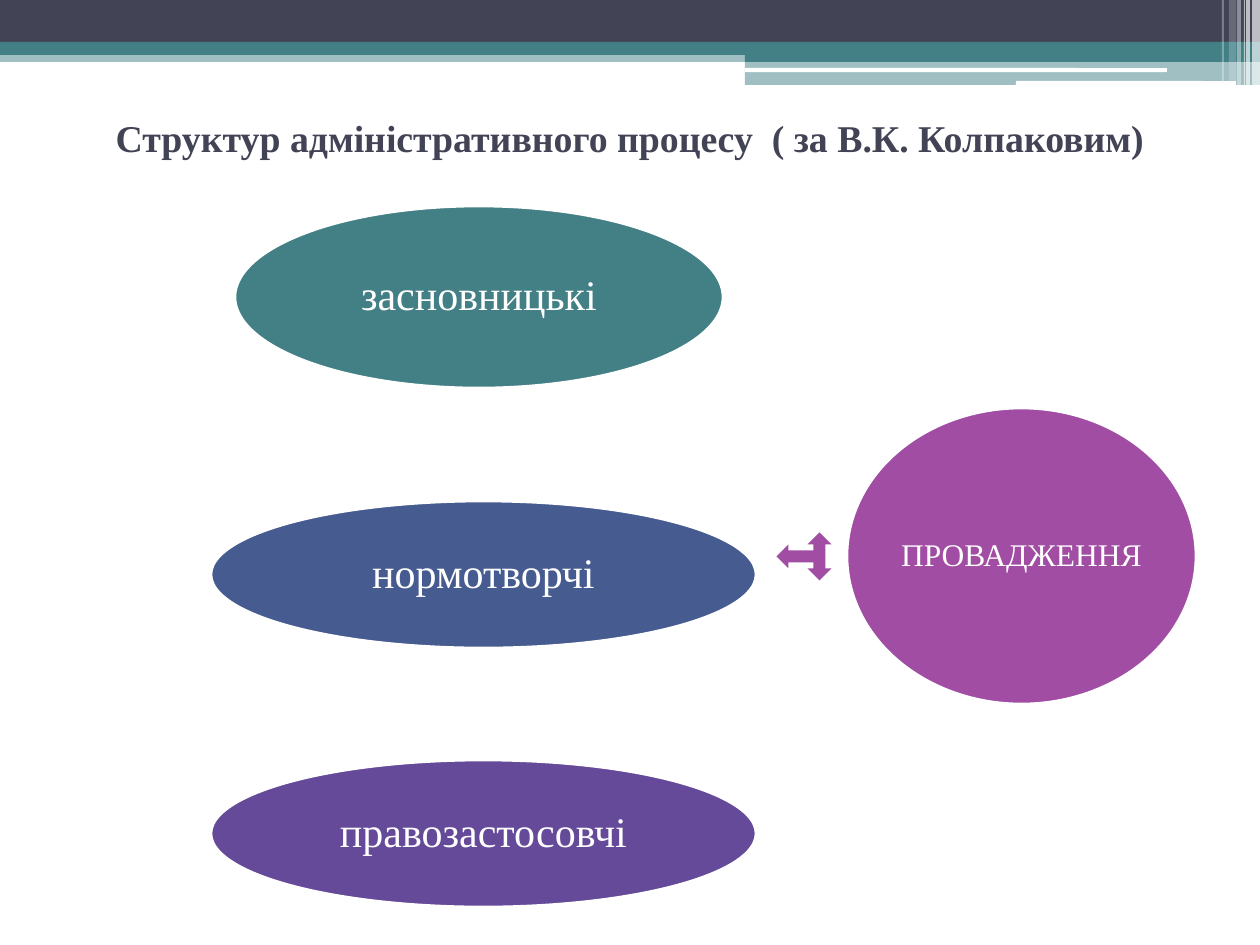
from lxml.etree import SubElement
from pptx import Presentation
from pptx.dml.color import RGBColor
from pptx.enum.shapes import MSO_SHAPE
from pptx.enum.text import MSO_ANCHOR, MSO_AUTO_SIZE, PP_ALIGN
from pptx.oxml.ns import qn
from pptx.util import Pt

PIXEL = 914400 / 126
FONT = "Times New Roman"
WHITE, TEAL, SLATE, PURPLE = "FFFFFF", "438086", "424456", "A04DA3"


def add_figure(kind, bounds, color, opacity=100, outline=None):
    """Add a filled preset shape; bounds are left, top, width, height in pixels."""
    shape = page.shapes.add_shape(kind, *[round(value * PIXEL) for value in bounds])
    shape.shadow.inherit = False
    shape.fill.solid()
    shape.fill.fore_color.rgb = RGBColor.from_string(color)
    if opacity < 100:
        color_node = shape.fill._xPr.find(qn("a:solidFill"))[0]
        SubElement(color_node, qn("a:alpha"), val=str(opacity * 1000))
    if outline:
        shape.line.color.rgb = RGBColor.from_string(outline)
        shape.line.width = Pt(1.5)
    else:
        shape.line.fill.background()
    return shape


def write_text(box, text, size, color, bold=False, spacing=1.0, wrap=True, inset=None):
    """Write one centred paragraph into a shape or placeholder."""
    frame = box.text_frame
    frame.word_wrap = wrap
    frame.auto_size = MSO_AUTO_SIZE.NONE
    frame.vertical_anchor = MSO_ANCHOR.MIDDLE
    if inset is not None:
        margin = round(inset * PIXEL)
        frame.margin_left = frame.margin_right = margin
        frame.margin_top = frame.margin_bottom = margin
    para = frame.paragraphs[0]
    para.alignment = PP_ALIGN.CENTER
    para.line_spacing = spacing
    span = para.add_run()
    span.text = text
    span.font.name = FONT
    span.font.size = Pt(size)
    span.font.bold = bold
    span.font.color.rgb = RGBColor.from_string(color)


deck = Presentation()
deck.slide_width, deck.slide_height = round(1260 * PIXEL), round(945 * PIXEL)
page = deck.slides.add_slide(deck.slide_layouts[5])

# Header bands
for bounds, color, opacity in [
    ((0, 50, 1260, 12), TEAL, 50),
    ((0, 0, 1260, 43), SLATE, 100),
    ((0, 42, 1260, 13), TEAL, 100),
    ((745, 49, 515, 13), TEAL, 100),
    ((745, 61, 515, 24), TEAL, 50),
]:
    add_figure(MSO_SHAPE.RECTANGLE, bounds, color, opacity)

for bounds in [(745, 68, 422, 4), (1016, 81, 220, 5)]:
    add_figure(MSO_SHAPE.ROUNDED_RECTANGLE, bounds, WHITE)

# Translucent stripes in the corner
for left, width, height, opacity in [
    (1252, 8, 85, 65),
    (1246, 4, 85, 65),
    (1244, 1, 85, 60),
    (1237, 4, 85, 40),
    (1229, 7, 81, 20),
    (1222, 2, 81, 30),
]:
    add_figure(MSO_SHAPE.RECTANGLE, (left, 0, width, height), WHITE, opacity)

# Title
title = page.shapes.title
title.left, title.top, title.width, title.height = [
    round(value * PIXEL) for value in (63, 85, 1134, 105)
]
write_text(title, "Структур адміністративного процесу  ( за В.К. Колпаковим)",
           21.6, SLATE, bold=True)

# Kinds of proceedings and their common name
arrow = add_figure(MSO_SHAPE.LEFT_RIGHT_UP_ARROW, (780, 529, 48, 55), PURPLE)
arrow.rotation = 270

for text, bounds, color, size in [
    ("засновницькі", (235, 206, 488, 182), TEAL, 24),
    ("нормотворчі", (211, 501, 545, 147), "465B90", 24),
    ("правозастосовчі", (211, 760, 545, 147), "654A99", 24),
    ("ПРОВАДЖЕННЯ", (847, 408, 349, 296), PURPLE, 18),
]:
    oval = add_figure(MSO_SHAPE.OVAL, bounds, color, outline=WHITE)
    write_text(oval, text, size, WHITE, spacing=0.9, wrap=False, inset=4)

deck.save("out.pptx")
